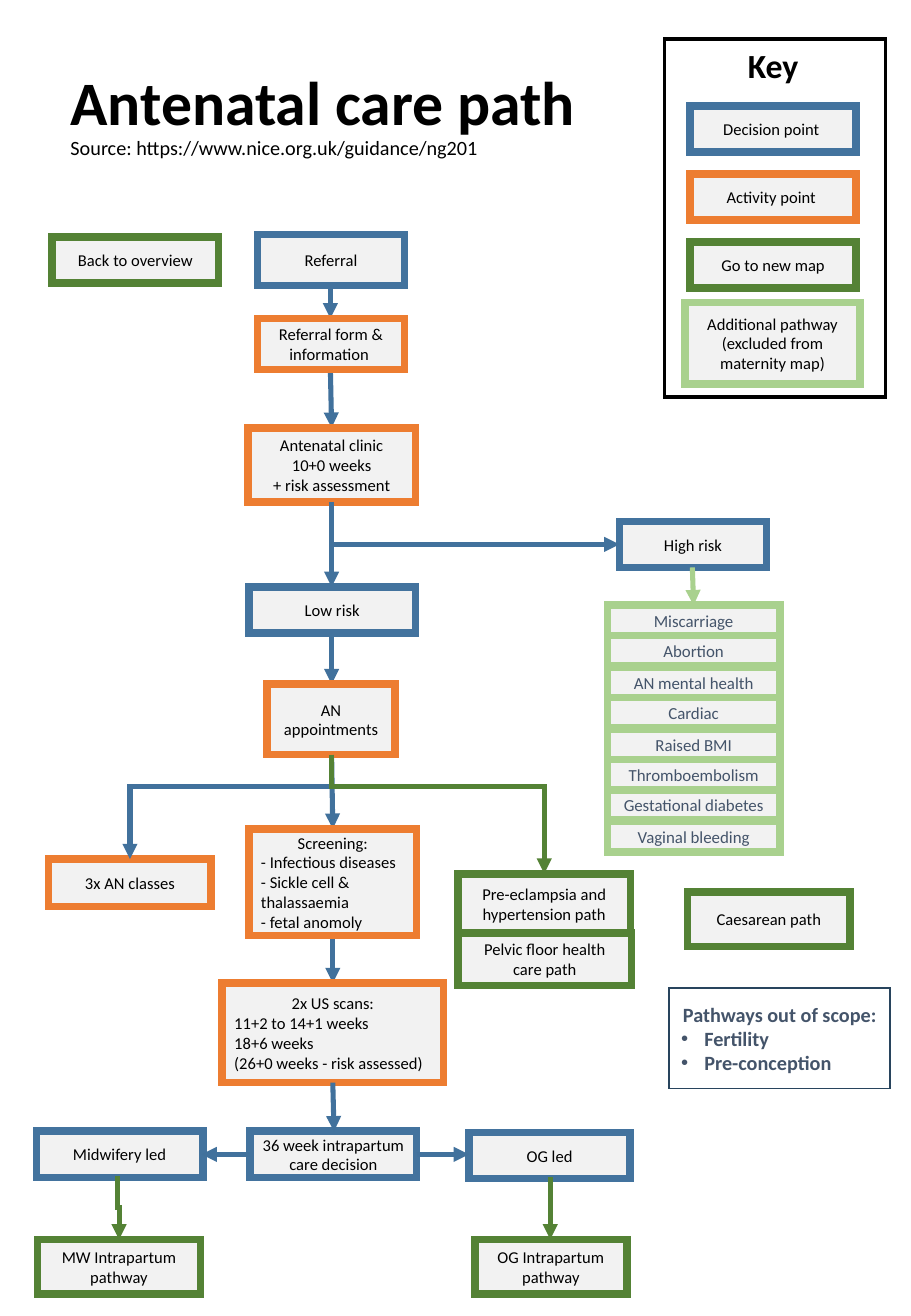
"""Build the antenatal care path flowchart slide."""
from lxml.etree import SubElement
from pptx import Presentation
from pptx.dml.color import RGBColor
from pptx.enum.shapes import MSO_CONNECTOR as Connector, MSO_SHAPE as Shape
from pptx.enum.text import MSO_ANCHOR as Anchor, MSO_AUTO_SIZE as AutoSize, PP_ALIGN as Align
from pptx.oxml.ns import qn
from pptx.util import Emu, Pt

EMU_PER_PX = 9144
FONT = "Calibri"
COLOURS = {
    "text": "000000", "slate": "44546A", "paper": "F2F2F2", "scope": "28445D",
    "decision": "43739E", "activity": "ED7D31", "map": "548235",
    "extra": "A9D18E", "flow": "41719C",
}
KEY = [
    ("decision", (568, 87, 137, 38), ["Decision point "]),
    ("activity", (568, 143, 137, 38), ["Activity point "]),
    ("map", (568, 199, 137, 38), ["Go to new map"]),
    ("extra", (564, 249, 144, 67), ["Additional pathway (excluded from maternity map)"]),
]
STEPS = [
    ("activity", (205, 682, 138, 88),
     ["Screening:", "- Infectious diseases\n- Sickle cell & thalassaemia\n- fetal anomoly"]),
    ("decision", (212, 193, 121, 42), ["Referral"]),
    ("map", (31, 1020, 134, 45), ["MW Intrapartum pathway"]),
    ("decision", (205, 483, 137, 38), ["Low risk"]),
    ("decision", (510, 429, 121, 38), ["High risk"]),
    ("activity", (183, 809, 182, 82),
     ["2x US scans:", "11+2 to 14+1 weeks", "18+6 weeks", "(26+0 weeks - risk assessed)"]),
    ("map", (377, 719, 142, 49), ["Pre-eclampsia and hypertension path"]),
    ("activity", (40, 707, 134, 39), ["3x AN classes"]),
    ("map", (43, 195, 137, 38), ["Back to overview"]),
    ("activity", (212, 262, 121, 42), ["Referral form & information "]),
    ("activity", (204, 352, 138, 61), ["Antenatal clinic\n10+0 weeks\n+ risk assessment"]),
    ("activity", (220, 563, 105, 58), ["AN appointments"]),
    ("decision", (206, 931, 137, 38), ["36 week intrapartum care decision"]),
    ("decision", (30, 931, 137, 38), ["Midwifery led"]),
    ("decision", (386, 932, 133, 38), ["OG led"]),
    ("map", (391, 1020, 125, 45), ["OG Intrapartum pathway"]),
    ("map", (377, 768, 143, 43), ["Pelvic floor health care path"]),
    ("map", (566, 734, 134, 45), ["Caesarean path"]),
]
CONDITIONS = ["Miscarriage", "Abortion", "AN mental health", "Cardiac", "Raised BMI",
              "Thromboembolism", "Gestational diabetes", "Vaginal bleeding"]
ARROWS_UNDER = [
    ("flow", (273, 413), (273, 483)), ("flow", (273, 621), (274, 682)),
    ("flow", (272, 234), (272, 262)), ("flow", (272, 303), (273, 352)),
    ("flow", (273, 520), (273, 563)), ("flow", (274, 770), (274, 809)),
]
ARROWS_OVER = [
    ("extra", (570, 467), (571, 498)), ("flow", (343, 950), (386, 950)),
    ("flow", (206, 950), (166, 950)), ("flow", (274, 891), (275, 931)),
    ("map", (453, 969), (453, 1020)),
]
ELBOWS = [
    ("flow", (273, 413), (510, 448), 448), ("flow", (273, 621), (107, 707), 647),
    ("map", (273, 621), (448, 719), 647), ("map", (97, 968), (98, 1020), 994),
]


def px(length):
    return Emu(round(length * EMU_PER_PX))


def rgb(name):
    return RGBColor.from_string(COLOURS[name])


def write(paragraph, text, size, colour="text", bold=False, align=Align.LEFT):
    paragraph.alignment = align
    for index, line in enumerate(text.split("\n")):
        if index:
            paragraph.add_line_break()
        run = paragraph.add_run()
        run.text = line
        run.font.name, run.font.size, run.font.bold = FONT, Pt(size), bold
        run.font.color.rgb = rgb(colour)


def next_paragraph(frame, index):
    return frame.add_paragraph() if index else frame.paragraphs[0]


def stroke(line, colour, width):
    line.color.rgb = rgb(colour)
    line.width = Pt(width)
    SubElement(line._get_or_add_ln(), qn("a:miter"), lim="800000")


def add_frame(slide, place, colour, width, fill=None):
    frame = slide.shapes.add_shape(Shape.RECTANGLE, *map(px, place))
    frame.shadow.inherit = False
    if fill:
        frame.fill.solid()
        frame.fill.fore_color.rgb = rgb(fill)
    else:
        frame.fill.background()
    stroke(frame.line, colour, width)
    frame.text_frame.word_wrap = True
    frame.text_frame.vertical_anchor = Anchor.MIDDLE
    return frame.text_frame


def add_step(slide, kind, place, paragraphs, size=9.8, colour="text"):
    body = add_frame(slide, place, kind, 4.5, "paper")
    for index, text in enumerate(paragraphs):
        align = Align.LEFT if index else Align.CENTER
        write(next_paragraph(body, index), text, size, colour, align=align)


def add_arrow(slide, colour, start, end, kind=Connector.STRAIGHT):
    arrow = slide.shapes.add_connector(kind, *map(px, start + end))
    stroke(arrow.line, colour, 3)
    SubElement(arrow.line._get_or_add_ln(), qn("a:tailEnd"), type="triangle")
    SubElement(arrow._element.spPr, qn("a:effectLst"))
    return arrow


def add_elbow(slide, colour, start, end, turn):
    (x1, y1), (x2, y2) = start, end
    across, down = abs(x2 - x1), y2 - y1
    elbow = add_arrow(slide, colour, start, end, Connector.ELBOW)
    elbow.left, elbow.top = px((x1 + x2 - down) / 2), px((y1 + y2 - across) / 2)
    elbow.width, elbow.height = px(down), px(across)
    transform = elbow._element.spPr.find(qn("a:xfrm"))
    transform.set("flipH", "1" if x2 > x1 else "0")
    transform.set("rot", str((270 if x2 > x1 else 90) * 60000))
    geometry = elbow._element.spPr.find(qn("a:prstGeom"))
    if turn == y2:
        geometry.set("prst", "bentConnector2")
    else:
        share = round((turn - y1) / down * 100000)
        SubElement(geometry.find(qn("a:avLst")), qn("a:gd"), name="adj1", fmla=f"val {share}")


def add_title(slide):
    title = slide.shapes.title
    title.left, title.top, title.width, title.height = map(px, (50, 41, 476, 95))
    heading = title.text_frame
    heading.word_wrap, heading.auto_size = True, AutoSize.NONE
    heading.vertical_anchor = Anchor.BOTTOM
    heading.margin_left = heading.margin_right = px(8)
    heading.margin_top = heading.margin_bottom = px(4)
    lines = [("Antenatal care path", 36.6, True),
             ("Source: https://www.nice.org.uk/guidance/ng201", 12, False)]
    for index, (text, size, bold) in enumerate(lines):
        paragraph = next_paragraph(heading, index)
        paragraph.line_spacing = 0.9
        paragraph.space_before = Pt(0)
        write(paragraph, text, size, bold=bold)


def add_key(slide):
    add_frame(slide, (547, 32, 182, 295), "text", 2.25)
    label = slide.shapes.add_textbox(*map(px, (568, 32, 137, 44))).text_frame
    label.word_wrap = True
    write(label.paragraphs[0], "Key", 20, bold=True, align=Align.CENTER)
    for entry in KEY:
        add_step(slide, *entry)


def add_scope(slide):
    scope = add_frame(slide, (551, 813, 182, 83), "scope", 1)
    write(scope.paragraphs[0], "Pathways out of scope:", 12, "slate", True, Align.CENTER)
    for topic in ("Fertility", "Pre-conception"):
        item = scope.add_paragraph()
        write(item, topic, 12, "slate", True)
        properties = item._p.get_or_add_pPr()
        properties.set("marL", str(px(19)))
        properties.set("indent", str(px(-19)))
        SubElement(properties, qn("a:buFont"), typeface="Arial")
        SubElement(properties, qn("a:buChar"), char="•")


def main():
    deck = Presentation()
    deck.slide_width, deck.slide_height = px(750), px(1083)
    slide = deck.slides.add_slide(deck.slide_layouts[5])
    add_title(slide)
    add_key(slide)
    for arrow in ARROWS_UNDER:
        add_arrow(slide, *arrow)
    for step in STEPS:
        add_step(slide, *step)
    for row, condition in enumerate(CONDITIONS):
        add_step(slide, "extra", (500, 498 + round(row * 25.4), 142, 25), [condition], 10, "slate")
    for arrow in ARROWS_OVER:
        add_arrow(slide, *arrow)
    for elbow in ELBOWS:
        add_elbow(slide, *elbow)
    add_scope(slide)
    deck.save("out.pptx")


if __name__ == "__main__":
    main()
